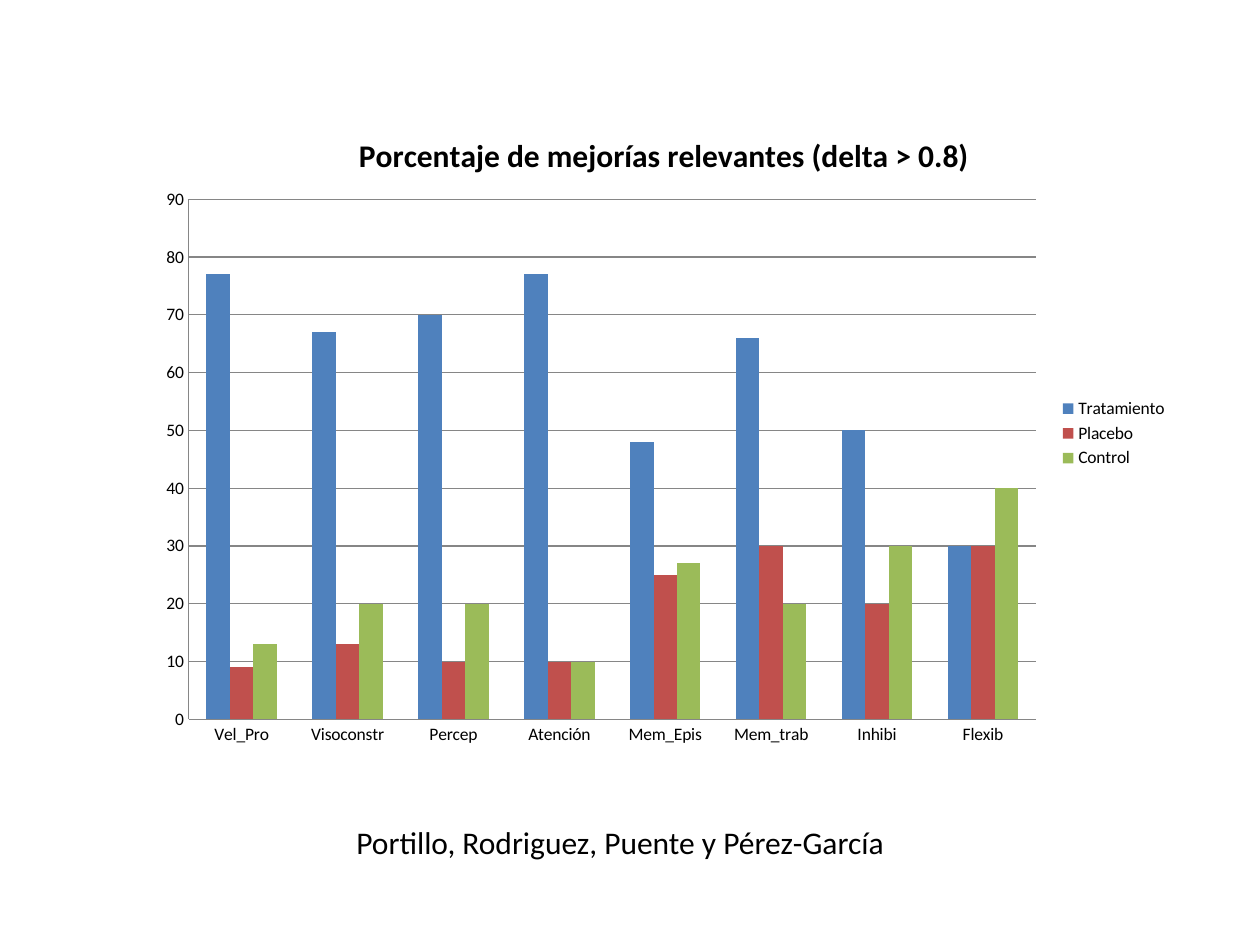
from lxml import etree
from pptx import Presentation
from pptx import util as u
from pptx.chart.data import CategoryChartData
from pptx.dml.color import RGBColor
from pptx.enum import chart as ch
from pptx.oxml.ns import qn

CATEGORIES = ["Vel_Pro", "Visoconstr", "Percep", "Atención",
              "Mem_Epis", "Mem_trab", "Inhibi", "Flexib"]
# Group name, bar colour, percentages
GROUPS = [
    ("Tratamiento", "4F81BD", [77, 67, 70, 77, 48, 66, 50, 30]),
    ("Placebo", "C0504D", [9, 13, 10, 10, 25, 30, 20, 30]),
    ("Control", "9BBB59", [13, 20, 20, 10, 27, 20, 30, 40]),
]


def color(hex_code):
    return RGBColor.from_string(hex_code)


class SlideBuilder:
    font_name = "Calibri"
    ink = "000000"
    grid = "868686"

    def __init__(self, slide):
        self.slide = slide

    def style(self, font, size, bold=False):
        font.name = self.font_name
        font.size = u.Pt(size)
        font.bold = bold
        font.color.rgb = color(self.ink)

    def line(self, target):
        target.format.line.color.rgb = color(self.grid)
        target.format.line.width = u.Pt(0.75)

    def caption(self, words, box, size):
        frame = self.slide.shapes.add_textbox(*map(u.Inches, box)).text_frame
        frame.word_wrap = True
        frame.text = words
        self.style(frame.paragraphs[0].runs[0].font, size)

    def column_chart(self, title, categories, groups, box, plot_area):
        data = CategoryChartData()
        data.categories = categories
        for name, _, values in groups:
            data.add_series(name, values)
        chart = self.slide.shapes.add_chart(
            ch.XL_CHART_TYPE.COLUMN_CLUSTERED, *map(u.Inches, box), data).chart
        self.style(chart.font, 10)

        # Title and legend
        chart.has_title = True
        heading = chart.chart_title.text_frame
        heading.text = title
        self.style(heading.paragraphs[0].runs[0].font, 18, bold=True)
        chart.has_legend = True
        chart.legend.position = ch.XL_LEGEND_POSITION.RIGHT
        chart.legend.include_in_layout = False

        # Bars
        plot = chart.plots[0]
        plot.gap_width = 150
        plot.overlap = 0
        plot.vary_by_categories = False
        for series, (_, fill, _) in zip(plot.series, groups):
            series.format.fill.solid()
            series.format.fill.fore_color.rgb = color(fill)

        # Axes
        for axis in (chart.category_axis, chart.value_axis):
            axis.major_tick_mark = axis.minor_tick_mark = ch.XL_TICK_MARK.NONE
            self.line(axis)
        scale = chart.value_axis
        scale.minimum_scale, scale.maximum_scale, scale.major_unit = 0, 90, 10
        scale.has_major_gridlines = True
        self.line(scale.major_gridlines)

        self.place_plot(chart, plot_area)

    def place_plot(self, chart, fractions):
        area = chart.plots[0]._element.getparent()
        for old in area.findall(qn("c:layout")):
            area.remove(old)
        layout = etree.Element(qn("c:layout"))
        manual = etree.SubElement(layout, qn("c:manualLayout"))
        settings = [("layoutTarget", "inner"), ("xMode", "edge"), ("yMode", "edge")]
        settings += zip("xywh", fractions)
        for tag, value in settings:
            etree.SubElement(manual, qn("c:" + tag)).set("val", str(value))
        area.insert(0, layout)


def main():
    deck = Presentation()
    deck.slide_width, deck.slide_height = u.Inches(10), u.Inches(7.5)
    builder = SlideBuilder(deck.slides.add_slide(deck.slide_layouts[6]))

    # Authors
    builder.caption("Portillo, Rodriguez, Puente y Pérez-García",
                    (2.73, 6.48, 6.56, 0.4), 18)

    # Improvement by cognitive domain
    builder.column_chart("Porcentaje de mejorías relevantes (delta > 0.8)",
                         CATEGORIES, GROUPS, (1.17, 0.86, 8.2, 5.16),
                         (0.04, 0.14, 0.82, 0.8))
    deck.save("out.pptx")


if __name__ == "__main__":
    main()
